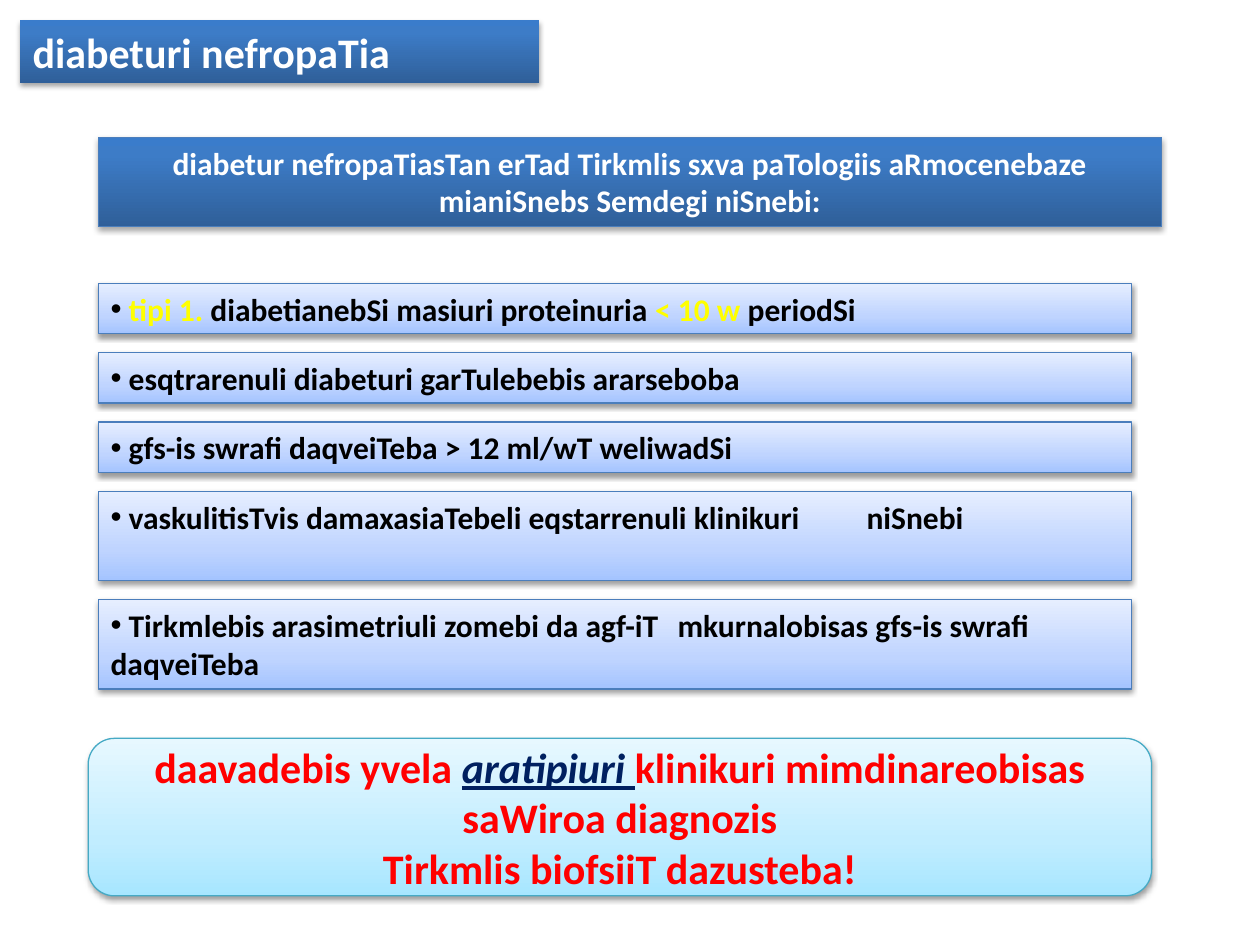
from lxml import etree
from pptx import Presentation
from pptx.dml.color import RGBColor
from pptx.enum import shapes, text
from pptx.oxml import ns
from pptx.util import Inches, Pt

WHITE = RGBColor(0xFF, 0xFF, 0xFF)
BLACK = RGBColor(0, 0, 0)
YELLOW = RGBColor(0xFF, 0xFF, 0)
RED = RGBColor(0xFF, 0, 0)
NAVY = RGBColor(0, 0x20, 0x60)
BLUE_EDGE = RGBColor(0x4B, 0x7E, 0xBC)
AQUA_EDGE = RGBColor(0x46, 0xAA, 0xC5)

# Gradient stops run from the bottom edge to the top edge.
DEEP_BLUE = [(0, RGBColor(0x2F, 0x5F, 0x99)), (80, RGBColor(0x3D, 0x7C, 0xC7)),
             (100, RGBColor(0x3A, 0x7C, 0xCB))]
PALE_BLUE = [(0, RGBColor(0xA4, 0xC4, 0xFF)), (35, RGBColor(0xBF, 0xD4, 0xFF)),
             (100, RGBColor(0xE6, 0xEE, 0xFF))]
PALE_AQUA = [(0, RGBColor(0xA7, 0xE6, 0xFF)), (35, RGBColor(0xC1, 0xED, 0xFF)),
             (100, RGBColor(0xE7, 0xF8, 0xFF))]

ROW_GAP = 0.15
SIGNS = [
    (0.4, [(" ", BLACK), ("tipi 1. ", YELLOW),
           ("diabetianebSi masiuri proteinuria ", BLACK),
           ("< 10 w ", YELLOW), ("periodSi", BLACK)]),
    (0.4, [(" esqtrarenuli diabeturi garTulebebis ararseboba", BLACK)]),
    (0.4, [(" gfs-is swrafi daqveiTeba > 12 ml/wT weliwadSi", BLACK)]),
    (0.71, [(" vaskulitisTvis damaxasiaTebeli eqstarrenuli klinikuri \tniSnebi", BLACK)]),
    (0.71, [(" Tirkmlebis arasimetriuli zomebi da agf-iT \t"
             "mkurnalobisas gfs-is swrafi daqveiTeba", BLACK)]),
]


def add_child(parent, tag, **attributes):
    return etree.SubElement(parent, ns.qn(tag), attributes)


def set_gradient(shape, stops):
    shape.fill.gradient()
    shape.fill.gradient_angle = 90
    stop_list = shape.fill._fill._gradFill.find(ns.qn("a:gsLst"))
    for stop in list(stop_list):
        stop_list.remove(stop)
    for position, color in stops:
        stop = add_child(stop_list, "a:gs", pos=str(position * 1000))
        add_child(stop, "a:srgbClr", val=str(color))


def set_shadow(shape, opacity, distance):
    shape.shadow.inherit = False
    effects = shape._element.spPr.find(ns.qn("a:effectLst"))
    shadow = add_child(effects, "a:outerShdw", blurRad=str(Pt(3.1)),
                       dist=str(Pt(distance)), dir="5400000", rotWithShape="0")
    color = add_child(shadow, "a:srgbClr", val="000000")
    add_child(color, "a:alpha", val=str(opacity * 1000))


def add_panel(slide, box, stops, edge=None, kind=shapes.MSO_SHAPE.RECTANGLE,
              opacity=38, distance=1.6):
    panel = slide.shapes.add_shape(kind, *(Inches(length) for length in box))
    set_gradient(panel, stops)
    if edge is None:
        panel.line.fill.background()
    else:
        panel.line.color.rgb = edge
        panel.line.width = Pt(0.75)
    set_shadow(panel, opacity, distance)
    return panel


def write(panel, paragraphs, size=18, align=text.PP_ALIGN.LEFT,
          anchor=text.MSO_ANCHOR.TOP, bullet=False):
    """Each paragraph is a list of (words, color) or (words, color, emphasised)."""
    frame = panel.text_frame
    frame.word_wrap = True
    frame.vertical_anchor = anchor
    for index, runs in enumerate(paragraphs):
        paragraph = frame.add_paragraph() if index else frame.paragraphs[0]
        paragraph.alignment = align
        if bullet:
            properties = paragraph._p.get_or_add_pPr()
            add_child(properties, "a:buFont", typeface="Arial")
            add_child(properties, "a:buChar", char="•")
        for words, color, *emphasised in runs:
            run = paragraph.add_run()
            run.text = words
            font = run.font
            font.name, font.size, font.bold = "Calibri", Pt(size), True
            font.color.rgb = color
            if emphasised:
                font.italic = font.underline = True


def add_title(slide, box):
    panel = add_panel(slide, box, DEEP_BLUE, opacity=35, distance=1.8)
    write(panel, [[("diabeturi nefropaTia", WHITE)]], size=24)


def add_heading(slide, box):
    panel = add_panel(slide, box, DEEP_BLUE, BLUE_EDGE, opacity=35, distance=1.8)
    write(panel, [[("diabetur nefropaTiasTan erTad Tirkmlis sxva paTologiis "
                    "aRmocenebaze mianiSnebs Semdegi niSnebi:", WHITE)]],
          align=text.PP_ALIGN.CENTER)


def add_signs(slide, left, top, width):
    for height, runs in SIGNS:
        panel = add_panel(slide, (left, top, width, height), PALE_BLUE, BLUE_EDGE)
        write(panel, [runs], bullet=True)
        top += height + ROW_GAP


def add_conclusion(slide, box):
    panel = add_panel(slide, box, PALE_AQUA, AQUA_EDGE,
                      kind=shapes.MSO_SHAPE.ROUNDED_RECTANGLE)
    write(panel, [
        [("daavadebis yvela ", RED), ("aratipiuri ", NAVY, True),
         ("klinikuri mimdinareobisas saWiroa diagnozis", RED)],
        [("Tirkmlis biofsiiT dazusteba!", RED)],
    ], size=24, align=text.PP_ALIGN.CENTER, anchor=text.MSO_ANCHOR.MIDDLE)


def main():
    deck = Presentation()
    deck.slide_width, deck.slide_height = Inches(10), Inches(7.5)
    slide = deck.slides.add_slide(deck.slide_layouts[6])
    add_heading(slide, (0.78, 1.09, 8.44, 0.71))
    add_signs(slide, 0.78, 2.25, 8.2)
    add_conclusion(slide, (0.7, 5.86, 8.44, 1.25))
    add_title(slide, (0.16, 0.16, 4.12, 0.5))
    deck.save("out.pptx")


if __name__ == "__main__":
    main()
